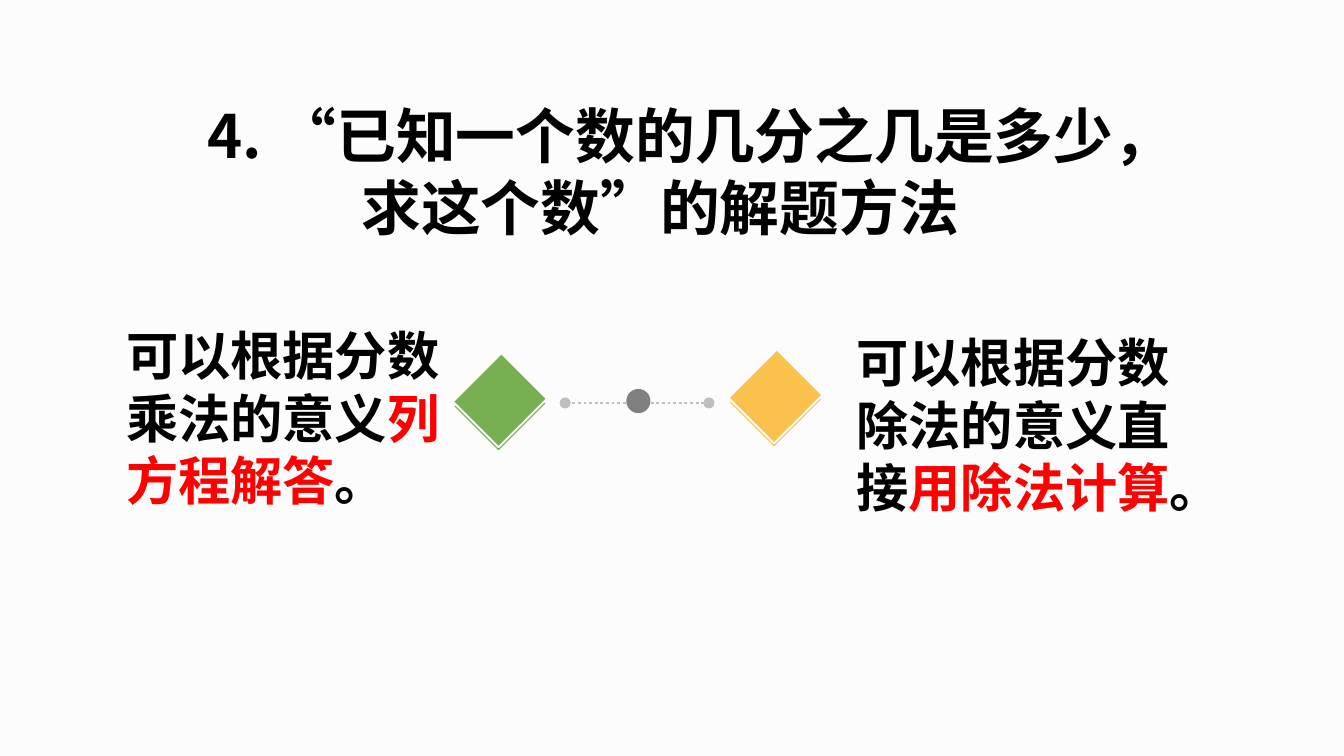
from dataclasses import dataclass

from lxml import etree
from pptx import Presentation
from pptx.dml.color import RGBColor
from pptx.enum.dml import MSO_LINE
from pptx.enum.lang import MSO_LANGUAGE_ID
from pptx.enum.shapes import MSO_CONNECTOR, MSO_SHAPE
from pptx.enum.text import MSO_ANCHOR, PP_ALIGN
from pptx.oxml.ns import qn
from pptx.util import Inches, Pt

RECTANGLE, OVAL = MSO_SHAPE.RECTANGLE, MSO_SHAPE.OVAL
STRAIGHT, DOTTED = MSO_CONNECTOR.STRAIGHT, MSO_LINE.ROUND_DOT
LEFT, CENTER, TOP = PP_ALIGN.LEFT, PP_ALIGN.CENTER, MSO_ANCHOR.TOP
CHINESE = MSO_LANGUAGE_ID.SIMPLIFIED_CHINESE
WIDTH = 10
HEIGHT = WIDTH * 9 / 16


@dataclass(frozen=True)
class Theme:
    """Colours, fonts and type sizes of the deck."""
    paper: str = "FCFCFC"
    ink: str = "000000"
    accent: str = "FF0000"
    green: str = "78AF51"
    amber: str = "FAC14D"
    dotted: str = "BFBFBF"
    hub: str = "808080"
    latin: str = "Times New Roman"
    chinese: str = "Noto Sans CJK SC"
    title: int = 32
    body: int = 28
    leading: float = 1.2


THEME = Theme()


def color(value):
    """Turn a hex string into a colour."""
    return RGBColor.from_string(value)


def across(percent):
    """Length as a percentage of the slide width."""
    return Inches(WIDTH * percent / 100)


def down(percent):
    """Length as a percentage of the slide height."""
    return Inches(HEIGHT * percent / 100)


def add_span(para, text, size, ink=THEME.ink, font=THEME.latin):
    """Add one bold run with its Latin and East Asian fonts."""
    span = para.add_run()
    span.text = text
    span.font.name, span.font.size, span.font.bold = font, Pt(size), True
    span.font.language_id = CHINESE
    span.font.color.rgb = color(ink)
    latin = span.font._element.find(qn("a:latin"))
    latin.addnext(etree.Element(qn("a:ea"), typeface=THEME.chinese))


def add_text(page, spans, left, top, width, height, size, align=LEFT):
    """Add a wrapped box of one paragraph made of formatted spans."""
    box = page.shapes.add_textbox(across(left), down(top), across(width), down(height))
    frame = box.text_frame
    frame.word_wrap, frame.vertical_anchor = True, TOP
    para = frame.paragraphs[0]
    para.alignment = align
    para.line_spacing = Pt(size * THEME.leading)
    for text, style in spans:
        add_span(para, text, size, **style)


def add_figure(page, kind, center, middle, width, height, fill, outline=None, turn=0):
    """Add a filled shape around a centre point, sized in inches."""
    width, height = Inches(width), Inches(height)
    figure = page.shapes.add_shape(
        kind, across(center) - width // 2, down(middle) - height // 2, width, height)
    figure.shadow.inherit = False
    figure.rotation = turn
    figure.fill.solid()
    figure.fill.fore_color.rgb = color(fill)
    if outline:
        figure.line.color.rgb = color(outline)
        figure.line.width = Pt(1)
    else:
        figure.line.fill.background()


def add_diamond(page, center, middle, fill):
    """Add two stacked turned squares, the front one slightly higher."""
    for level in (middle + 0.6, middle):
        add_figure(page, RECTANGLE, center, level, 0.51, 0.48, fill, THEME.paper, 315)


def add_dotted_link(page, start, end, level):
    """Add a dotted connector with round ends."""
    link = page.shapes.add_connector(
        STRAIGHT, across(start), down(level), across(end), down(level))
    link.line.color.rgb = color(THEME.dotted)
    link.line.width = Pt(1.5)
    link.line.dash_style = DOTTED
    stroke = link.line._get_or_add_ln()
    for tag in ("a:headEnd", "a:tailEnd"):
        etree.SubElement(stroke, qn(tag), type="oval")
    etree.SubElement(link._element.spPr, qn("a:effectLst"))


def main():
    """Build and save the slide."""
    deck = Presentation()
    deck.slide_width, deck.slide_height = Inches(WIDTH), Inches(HEIGHT)
    page = deck.slides.add_slide(deck.slide_layouts[6])
    page.background.fill.solid()
    page.background.fill.fore_color.rgb = color(THEME.paper)

    red = {"ink": THEME.accent}
    title = [("4.", {"font": THEME.chinese}),
             (" “已知一个数的几分之几是多少，求这个数”的解题方法", {})]
    equation = [("可以根据分数乘法的意义", {}), ("列方程解答", red), ("。", {})]
    division = [("可以根据分数除法的意义直接", {}), ("用除法计算", red), ("。", {})]
    add_text(page, title, 12.35, 12.2, 73.6, 21, THEME.title, CENTER)
    add_text(page, equation, 8.4, 41.9, 26.1, 26.8, THEME.body)
    add_text(page, division, 62.75, 42.8, 26.7, 26.8, THEME.body)

    add_dotted_link(page, 52.75, 42.05, 53.3)
    add_diamond(page, 37.2, 52.95, THEME.green)
    add_diamond(page, 57.7, 52.45, THEME.amber)
    add_figure(page, OVAL, 47.5, 53.05, 0.18, 0.18, THEME.hub)
    deck.save("out.pptx")


if __name__ == "__main__":
    main()
